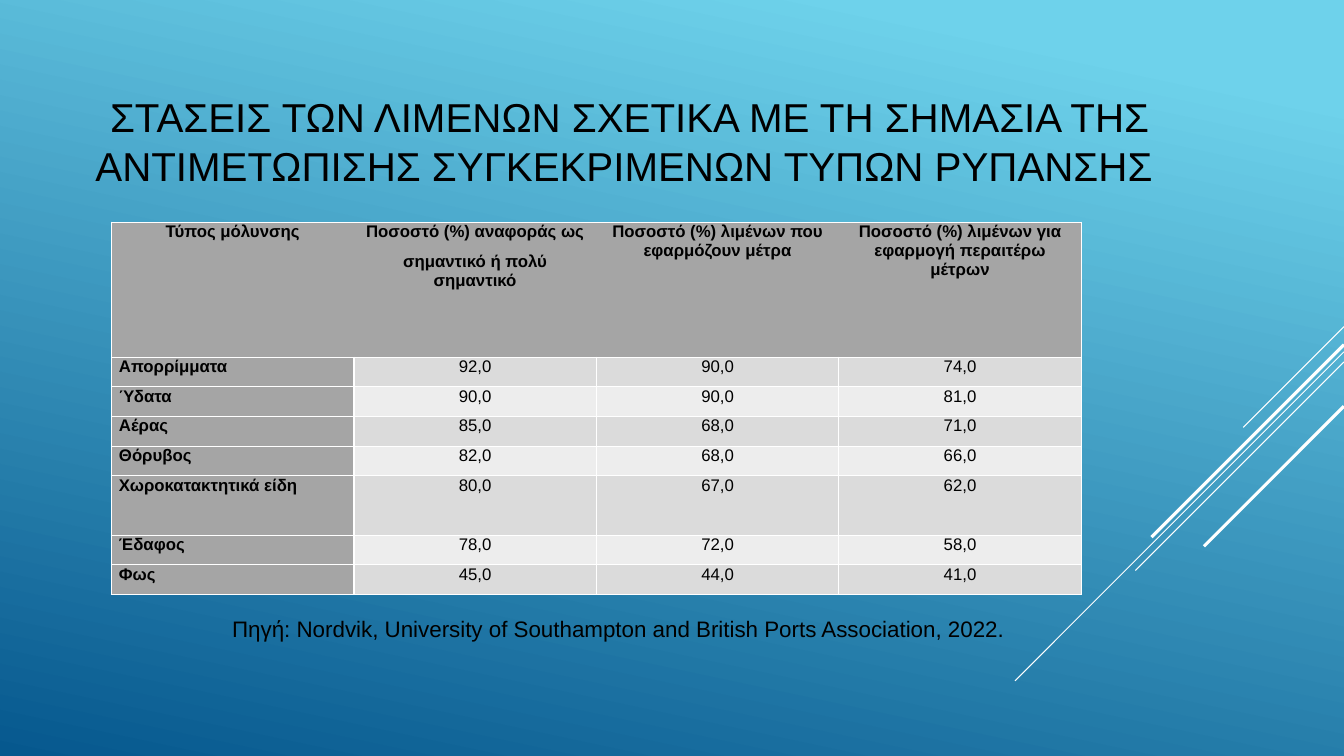
import pptx
import pptx.util
import pptx.dml.color
import pptx.enum.shapes
import pptx.enum.text
import pptx.oxml
import pptx.oxml.ns
import lxml.etree

Pt = pptx.util.Pt
ALIGN = pptx.enum.text.PP_ALIGN
ANCHOR = pptx.enum.text.MSO_ANCHOR

TITLE = "ΣΤΑΣΕΙΣ ΤΩΝ ΛΙΜΕΝΩΝ ΣΧΕΤΙΚΑ ΜΕ ΤΗ ΣΗΜΑΣΙΑ ΤΗΣ ΑΝΤΙΜΕΤΩΠΙΣΗΣ ΣΥΓΚΕΚΡΙΜΕΝΩΝ ΤΥΠΩΝ ΡΥΠΑΝΣΗΣ "
SOURCE = "Πηγή: Nordvik, University of Southampton and British Ports Association, 2022."
HEADER = (
    "Τύπος μόλυνσης",
    "Ποσοστό (%) αναφοράς ως\nσημαντικό ή πολύ σημαντικό",
    "Ποσοστό (%) λιμένων που εφαρμόζουν μέτρα",
    "Ποσοστό (%) λιμένων για εφαρμογή περαιτέρω μέτρων",
)
POLLUTION = [
    ("Απορρίμματα", "92,0", "90,0", "74,0"),
    ("Ύδατα", "90,0", "90,0", "81,0"),
    ("Αέρας", "85,0", "68,0", "71,0"),
    ("Θόρυβος", "82,0", "68,0", "66,0"),
    ("Χωροκατακτητικά είδη", "80,0", "67,0", "62,0"),
    ("Έδαφος", "78,0", "72,0", "58,0"),
    ("Φως", "45,0", "44,0", "41,0"),
]
COLORS = {"text": "000000", "line": "FFFFFF", "head": "A5A5A5", "odd": "DBDBDB",
          "even": "EDEDED", "sky": "6ED2EB", "sea": "06588E"}
FONT = "Arial"
WIDTH, HEIGHT = 960, 540
TITLE_BOX = (54, 54, 792, 93)
BODY_BOX = (54, 153.4, 775.4, 319)
TABLE_BOX = (79.6, 158.8, 692.8, 266)
ROW_HEIGHTS = [96.4, 21.2, 21.2, 21.2, 21.2, 42.4, 21.2, 21.2]
DIAGONALS = [(233.3, 72, 0.75), (251.3, 235, 0.75), (258.5, 149, 0.75),
             (246.2, 137.5, 2.25), (290.2, 100, 2.25)]


def rgb(name):
    return pptx.dml.color.RGBColor.from_string(COLORS[name])


def set_attrs(obj, values):
    for name, value in values.items():
        setattr(obj, name, value)


def place(sp, box):
    set_attrs(sp, dict(zip(("left", "top", "width", "height"), map(Pt, box))))


def write(tf, text, size, bold, align, after):
    tf.text = text
    for p in tf.paragraphs:
        set_attrs(p, {"alignment": align, "space_before": Pt(0), "space_after": Pt(after)})
        for r in p.runs:
            set_attrs(r.font, {"name": FONT, "size": Pt(size), "bold": bold})
            r.font.color.rgb = rgb("text")


def set_borders(cell, sides):
    tc_pr = cell._tc.get_or_add_tcPr()
    for side in "LRTB":
        ln = lxml.etree.SubElement(tc_pr, pptx.oxml.ns.qn("a:ln" + side), w=str(Pt(1)))
        if side in sides:
            fill = lxml.etree.SubElement(ln, pptx.oxml.ns.qn("a:solidFill"))
            lxml.etree.SubElement(fill, pptx.oxml.ns.qn("a:srgbClr"), val=COLORS["line"])
        else:
            lxml.etree.SubElement(ln, pptx.oxml.ns.qn("a:noFill"))


def add_background(s):
    fill = s.background.fill
    fill.gradient()
    fill.gradient_angle = 258
    for stop, name, position in zip(fill.gradient_stops, ("sky", "sea"), (0.1, 1)):
        stop.color.rgb = rgb(name)
        stop.position = position


def add_diagonals(s):
    for top, run, weight in DIAGONALS:
        line = s.shapes.add_connector(
            pptx.enum.shapes.MSO_CONNECTOR.STRAIGHT,
            Pt(WIDTH), Pt(top), Pt(WIDTH - run), Pt(top + run))
        line.line.width = Pt(weight)
        line.line.color.rgb = rgb("line")
        lxml.etree.SubElement(line._element.spPr, pptx.oxml.ns.qn("a:effectLst"))


def add_texts(s):
    title, body = s.shapes.title, s.placeholders[1]
    place(title, TITLE_BOX)
    place(body, BODY_BOX)
    write(title.text_frame, TITLE, 28.8, False, ALIGN.CENTER, 0)
    write(body.text_frame, SOURCE, 16, False, ALIGN.CENTER, 0)
    for sp, anchor in ((title, ANCHOR.MIDDLE), (body, ANCHOR.BOTTOM)):
        set_attrs(sp.text_frame, {"vertical_anchor": anchor, "word_wrap": True,
                                  "auto_size": pptx.enum.text.MSO_AUTO_SIZE.NONE})
    body.text_frame.margin_bottom = Pt(13.5)
    p_pr = body.text_frame.paragraphs[0]._p.get_or_add_pPr()
    set_attrs(p_pr, {"marL": 0, "indent": 0})
    p_pr.set("marL", "0")
    p_pr.set("indent", "0")
    lxml.etree.SubElement(p_pr, pptx.oxml.ns.qn("a:buNone"))


def add_pollution_table(s):
    rows = [HEADER] + POLLUTION
    table = s.shapes.add_table(len(rows), len(HEADER), *map(Pt, TABLE_BOX)).table
    set_attrs(table, {"first_row": False, "horz_banding": False})
    for col in table.columns:
        col.width = Pt(TABLE_BOX[2] / len(HEADER))
    for i, values in enumerate(rows):
        table.rows[i].height = Pt(ROW_HEIGHTS[i])
        for j, value in enumerate(values):
            cell = table.cell(i, j)
            heading = i == 0 or j == 0
            set_attrs(cell, {"margin_left": Pt(5.4), "margin_right": Pt(5.4),
                             "margin_top": 0, "margin_bottom": 0,
                             "vertical_anchor": ANCHOR.TOP})
            align = ALIGN.JUSTIFY if i and j == 0 else ALIGN.CENTER
            write(cell.text_frame, value, 12, heading, align, 8)
            sides = "LRTB" if i else "TB" + {0: "L", len(HEADER) - 1: "R"}.get(j, "")
            set_borders(cell, sides)
            cell.fill.solid()
            cell.fill.fore_color.rgb = rgb("head" if heading else "odd" if i % 2 else "even")


def main():
    prs = pptx.Presentation()
    set_attrs(prs, {"slide_width": Pt(WIDTH), "slide_height": Pt(HEIGHT)})
    s = prs.slides.add_slide(prs.slide_layouts[1])
    add_background(s)
    add_diagonals(s)
    add_texts(s)
    add_pollution_table(s)
    prs.save("out.pptx")


if __name__ == "__main__":
    main()
